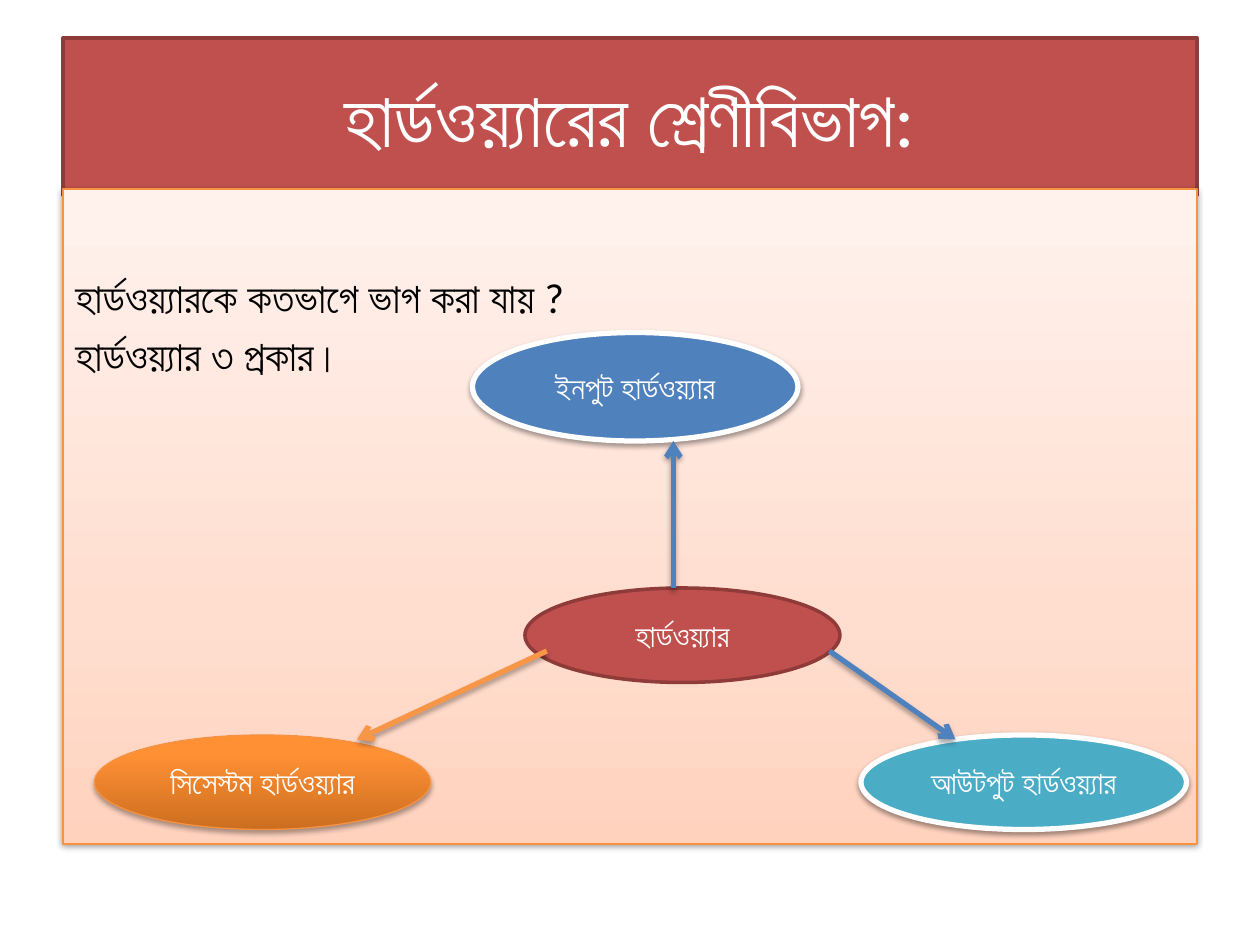
from lxml.etree import SubElement
from pptx import Presentation
from pptx.dml.color import RGBColor
from pptx.enum.shapes import MSO_CONNECTOR as CONN, MSO_SHAPE as SHAPE
from pptx.enum.text import MSO_ANCHOR as ANCHOR, PP_ALIGN as ALIGN
from pptx.oxml.ns import qn
from pptx.util import Pt

COLORS = {
    "white": "FFFFFF", "black": "000000", "red": "C0504D", "dark_red": "8E3B39",
    "blue": "4F81BD", "teal": "4BACC6", "orange": "F79646", "orange_edge": "F69240",
}
# Gradient stops run from the bottom edge upwards
PEACH = [(0, "FFD2BD"), (35, "FFDED0"), (100, "FFF2ED")]
AMBER = [(0, "CC6E20"), (80, "FF9034"), (100, "FF9136")]
SOFT, STRONG = (38, 1.6), (35, 1.8)  # shadow opacity in percent, distance
# Bengali letter YYA: as YA plus nukta, and as a single character
YA_NUKTA, YYA = chr(0x09AF) + chr(0x09BC), chr(0x09DF)


def rgb(name):
    return RGBColor.from_string(COLORS[name])


def add_shadow(effects, shadow):
    opacity, distance = shadow
    outer = SubElement(effects, qn("a:outerShdw"), blurRad=str(Pt(3.1)),
                       dist=str(Pt(distance)), dir="5400000", rotWithShape="0")
    color = SubElement(outer, qn("a:srgbClr"), val=COLORS["black"])
    SubElement(color, qn("a:alpha"), val=str(opacity * 1000))


def set_gradient(sp, stops):
    sp.fill.gradient()
    sp.fill.gradient_angle = 90
    stop_list = sp._element.spPr.find(qn("a:gradFill")).find(qn("a:gsLst"))
    for old in list(stop_list):
        stop_list.remove(old)
    for pos, color in stops:
        stop = SubElement(stop_list, qn("a:gs"), pos=str(pos * 1000))
        SubElement(stop, qn("a:srgbClr"), val=color)


def add_panel(slide, kind, box, fill, edge, width, shadow=None):
    sp = slide.shapes.add_shape(kind, *map(Pt, box))
    if isinstance(fill, list):
        set_gradient(sp, fill)
    else:
        sp.fill.solid()
        sp.fill.fore_color.rgb = rgb(fill)
    sp.line.color.rgb = rgb(edge)
    sp.line.width = Pt(width)
    sp.shadow.inherit = False
    if shadow:
        add_shadow(sp._element.spPr.find(qn("a:effectLst")), shadow)
    return sp


def set_text(sp, lines, size, color="white", align=ALIGN.CENTER, anchor=ANCHOR.MIDDLE):
    tf = sp.text_frame
    tf.word_wrap = True
    tf.vertical_anchor = anchor
    tf.text = "\n".join(lines).replace(YA_NUKTA, YYA)
    for p in tf.paragraphs:
        p.alignment = align
        for r in p.runs:
            r.font.name = "Calibri"
            r.font.size = Pt(size)
            r.font.color.rgb = rgb(color)


def add_arrow(slide, start, end, color):
    line = slide.shapes.add_connector(CONN.STRAIGHT, *map(Pt, start + end))
    line.line.color.rgb = rgb(color)
    line.line.width = Pt(3)
    SubElement(line.line._get_or_add_ln(), qn("a:tailEnd"), type="arrow")
    add_shadow(SubElement(line._element.spPr, qn("a:effectLst")), STRONG)


def add_title(slide, box):
    sp = add_panel(slide, SHAPE.RECTANGLE, box, "red", "dark_red", 2)
    set_text(sp, ["হার্ডওয়্যারের শ্রেণীবিভাগ:"], 44)


def add_body(slide, box):
    sp = add_panel(slide, SHAPE.RECTANGLE, box, PEACH, "orange_edge", 0.75, SOFT)
    set_text(sp, ["হার্ডওয়্যারকে কতভাগে ভাগ করা যায় ?", "হার্ডওয়্যার ৩ প্রকার।"],
             24, "black", ALIGN.LEFT, ANCHOR.TOP)
    sp.text_frame.margin_top = Pt(47)
    sp.text_frame.paragraphs[1].space_before = Pt(4.8)


def add_diagram(slide, box):
    left, top = box[:2]
    # Label, offset and size within the box, fill, edge, edge width, shadow
    nodes = [
        ("ইনপুট হার্ডওয়্যার", (234, 82, 186, 62), "blue", "white", 3, SOFT),
        ("হার্ডওয়্যার", (264, 228, 180, 54), "red", "dark_red", 2, None),
        ("সিসেস্টম হার্ডওয়্যার", (18, 312, 192, 54), AMBER, "orange_edge", 0.75, STRONG),
        ("আউটপুট হার্ডওয়্যার", (456, 312, 186, 54), "teal", "white", 3, SOFT),
    ]
    for label, (x, y, w, h), *style in nodes:
        sp = add_panel(slide, SHAPE.OVAL, (left + x, top + y, w, h), *style)
        set_text(sp, [label], 18)

    # Arrows from the central node to each kind of hardware
    arrows = [
        ((348.8, 228), (348.8, 144), "blue"),
        ((276.5, 264), (168, 314.6), "orange"),
        ((438, 264), (510, 314.6), "blue"),
    ]
    for (x1, y1), (x2, y2), color in arrows:
        add_arrow(slide, (left + x1, top + y1), (left + x2, top + y2), color)


def main():
    prs = Presentation()
    prs.slide_width, prs.slide_height = Pt(720), Pt(540)
    slide = prs.slides.add_slide(prs.slide_layouts[6])
    body_box = (36, 108, 648, 374.4)
    add_title(slide, (36, 21.6, 648, 90))
    add_body(slide, body_box)
    add_diagram(slide, body_box)
    prs.save("out.pptx")


if __name__ == "__main__":
    main()
